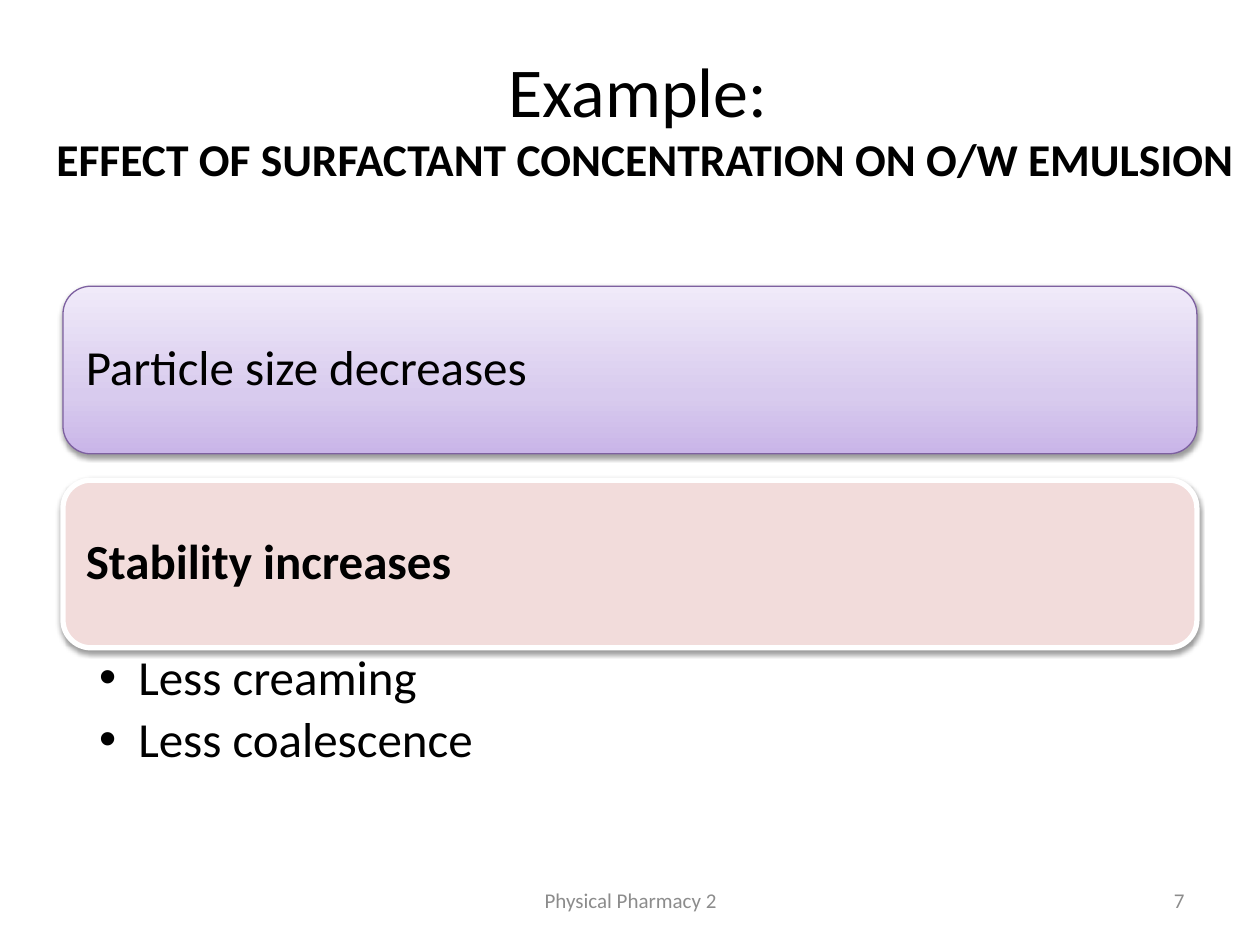
from dataclasses import dataclass
from lxml.etree import SubElement
from pptx import Presentation
from pptx.dml.color import RGBColor
from pptx.enum.shapes import MSO_SHAPE
from pptx.enum.text import MSO_ANCHOR, PP_ALIGN
from pptx.oxml import parse_xml
from pptx.oxml.ns import nsdecls, qn
from pptx.util import Cm, Pt


@dataclass(frozen=True)
class Theme:
    font: str = "Calibri"
    ink: str = "000000"
    muted: str = "8C8C8C"
    title_size: int = 40
    subtitle_size: int = 26
    body_size: int = 28
    footer_size: int = 12


THEME = Theme()
TITLE = "Example: "
SUBTITLE = "EFFECT OF SURFACTANT CONCENTRATION ON O/W EMULSION"
PANELS = [
    {"text": "Particle size decreases", "bold": False, "line": "7D60A0", "weight": 0.75,
     "fill": [(0, "C9B5E8"), (35, "D8CBEE"), (100, "F0EAF9")]},
    {"text": "Stability increases", "bold": True, "line": "FFFFFF", "weight": 3,
     "fill": "F2DCDB"},
]
EFFECTS = ["Less creaming", "Less coalescence"]
FOOTERS = [
    ("Physical Pharmacy 2", 8.69, 8.05, PP_ALIGN.CENTER),
    ("7", 18.21, 5.92, PP_ALIGN.RIGHT),
]

LEFT, WIDTH = 1.27, 22.86
PANEL_TOP, PANEL_HEIGHT, PANEL_PITCH = 5.77, 3.38, 3.91
LABEL_MARGIN = 0.16


def set_font(font, size, color=THEME.ink, bold=False):
    font.name = THEME.font
    font.size = Pt(size)
    font.bold = bold
    font.color.rgb = RGBColor.from_string(color)


def add_text_frame(page, left, top, width, height, insets, anchor=MSO_ANCHOR.MIDDLE):
    box = page.shapes.add_textbox(Cm(left), Cm(top), Cm(width), Cm(height))
    frame = box.text_frame
    frame.word_wrap = True
    frame.vertical_anchor = anchor
    (frame.margin_left, frame.margin_top,
     frame.margin_right, frame.margin_bottom) = (Cm(inset) for inset in insets)
    return frame


def add_title(page):
    frame = add_text_frame(page, 0.64, 0.76, 24.76, 3.18, (0.25, 0.13, 0.25, 0.13))
    para = frame.paragraphs[0]
    para.alignment = PP_ALIGN.CENTER
    heading = para.add_run()
    heading.text = TITLE
    set_font(heading.font, THEME.title_size)
    para.add_line_break()
    subtitle = para.add_run()
    subtitle.text = SUBTITLE
    set_font(subtitle.font, THEME.subtitle_size, bold=True)


def set_gradient(shape, stops):
    shape.fill.gradient()
    shape.fill.gradient_angle = 90
    stop_list = shape.fill._xPr.find(qn("a:gradFill")).find(qn("a:gsLst"))
    stop_list.clear()
    for position, color in stops:
        stop = SubElement(stop_list, qn("a:gs"), pos=str(position * 1000))
        SubElement(stop, qn("a:srgbClr"), val=color)


def add_shadow(shape):
    shape.shadow.inherit = False
    effects = shape._element.spPr.find(qn("a:effectLst"))
    effects.append(parse_xml(
        f'<a:outerShdw {nsdecls("a")} blurRad="{Pt(3.1)}" dist="{Pt(1.6)}" '
        'dir="5400000" rotWithShape="0"><a:srgbClr val="000000">'
        '<a:alpha val="38000"/></a:srgbClr></a:outerShdw>'))


def add_panel(page, panel, top):
    shape = page.shapes.add_shape(
        MSO_SHAPE.ROUNDED_RECTANGLE, Cm(LEFT), Cm(top), Cm(WIDTH), Cm(PANEL_HEIGHT))
    if isinstance(panel["fill"], str):
        shape.fill.solid()
        shape.fill.fore_color.rgb = RGBColor.from_string(panel["fill"])
    else:
        set_gradient(shape, panel["fill"])
    shape.line.color.rgb = RGBColor.from_string(panel["line"])
    shape.line.width = Pt(panel["weight"])
    add_shadow(shape)

    frame = add_text_frame(
        page, LEFT + LABEL_MARGIN, top + LABEL_MARGIN,
        WIDTH - 2 * LABEL_MARGIN, PANEL_HEIGHT - 2 * LABEL_MARGIN, (0.3,) * 4)
    para = frame.paragraphs[0]
    para.text = panel["text"]
    para.line_spacing = 0.9
    set_font(para.font, THEME.body_size, bold=panel["bold"])


def add_effects(page, top):
    frame = add_text_frame(
        page, LEFT, top, WIDTH, 3, (0.73, 0.1, 0.56, 0.1), MSO_ANCHOR.TOP)
    for index, effect in enumerate(EFFECTS):
        para = frame.paragraphs[0] if index == 0 else frame.add_paragraph()
        para.text = effect
        para.level = 1
        properties = para._p.get_or_add_pPr()
        properties.set("marL", str(Cm(0.79)))
        properties.set("indent", str(-Cm(0.79)))
        SubElement(properties, qn("a:buFont"), typeface="Arial")
        SubElement(properties, qn("a:buChar"), char="•")
        para.line_spacing = 0.9
        para.space_after = Pt(0.2 * THEME.body_size)
        set_font(para.font, THEME.body_size)


def add_footers(page):
    for text, left, width, alignment in FOOTERS:
        frame = add_text_frame(page, left, 17.65, width, 1.01, (0.25, 0.13, 0.25, 0.13))
        para = frame.paragraphs[0]
        para.text = text
        para.alignment = alignment
        set_font(para.font, THEME.footer_size, THEME.muted)


def main():
    deck = Presentation()
    deck.slide_width, deck.slide_height = Cm(25.4), Cm(19.05)
    page = deck.slides.add_slide(deck.slide_layouts[6])
    add_title(page)
    add_footers(page)
    for index, panel in enumerate(PANELS):
        add_panel(page, panel, PANEL_TOP + index * PANEL_PITCH)
    add_effects(page, PANEL_TOP + PANEL_PITCH + PANEL_HEIGHT)
    deck.save("out.pptx")


if __name__ == "__main__":
    main()
